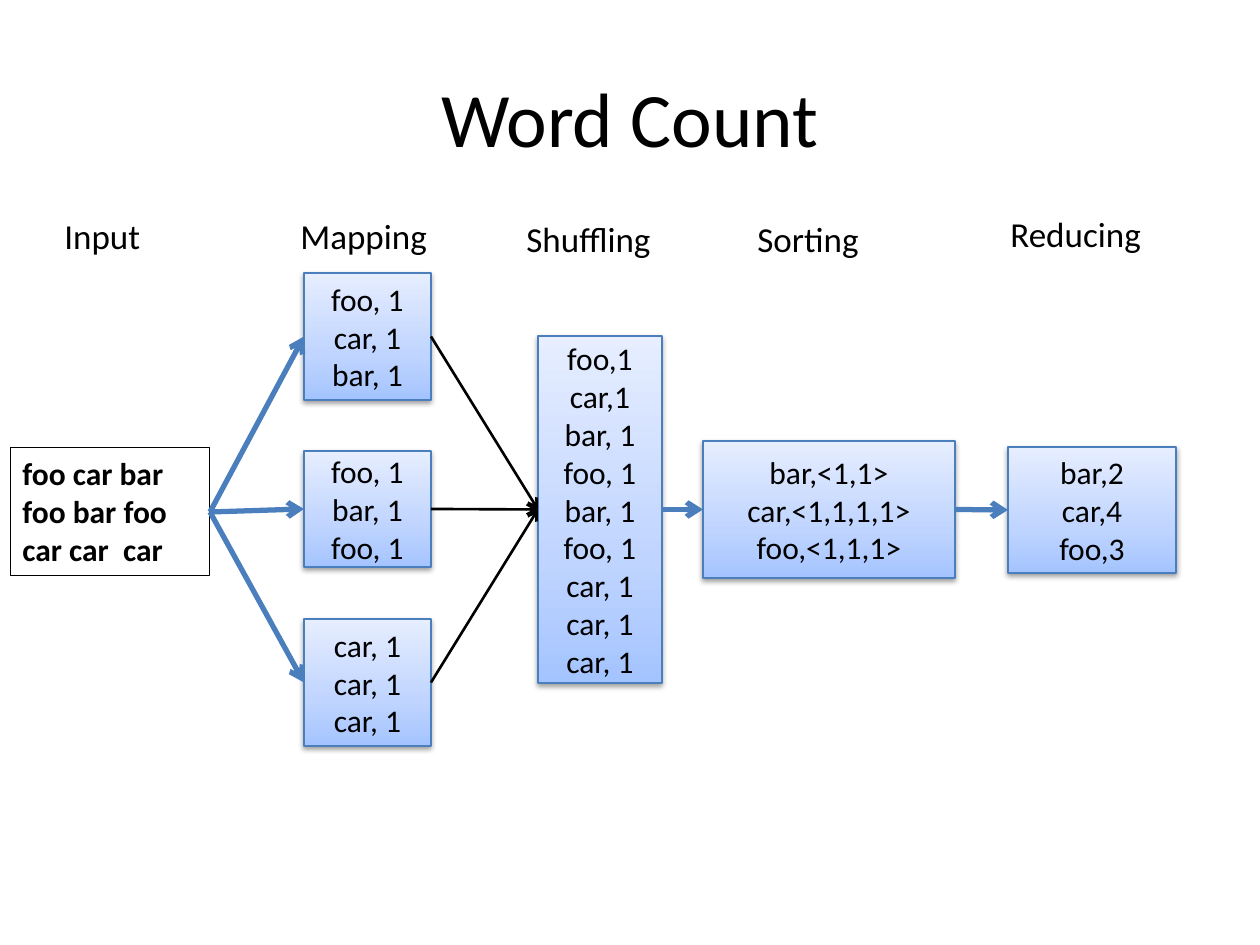
from dataclasses import dataclass
from itertools import pairwise

from lxml.etree import SubElement
from pptx import Presentation
from pptx.dml.color import RGBColor as Rgb
from pptx.enum.shapes import MSO_CONNECTOR as Connector, MSO_SHAPE as Preset
from pptx.enum.text import MSO_ANCHOR as Anchor, PP_ALIGN as Align
from pptx.oxml import parse_xml
from pptx.oxml.ns import nsdecls, qn
from pptx.util import Emu, Pt

SCALE = 914400 / 126
LEFT_SITE, RIGHT_SITE = 1, 3


@dataclass(frozen=True)
class Theme:
    font: str = "Calibri"
    ink: str = "000000"
    accent: str = "4B7EBC"
    gradient: tuple = ((0, "A4C4FF"), (35, "BFD4FF"), (100, "E6EEFF"))
    title_size: int = 44
    heading_size: int = 20
    body_size: int = 18
    frame: float = 0.5
    outline: float = 0.75
    thin: float = 1.5
    thick: float = 3


THEME = Theme()


def px(*lengths):
    return [Emu(round(length * SCALE)) for length in lengths]


def write(frame, text, size=THEME.body_size, bold=False, align=Align.LEFT,
          anchor=Anchor.TOP, wrap=True):
    frame.word_wrap = wrap
    frame.vertical_anchor = anchor
    frame.text = text
    for paragraph in frame.paragraphs:
        paragraph.alignment = align
        font = paragraph.font
        font.name, font.size, font.bold = THEME.font, Pt(size), bold
        font.color.rgb = Rgb.from_string(THEME.ink)


def draw_line(line, color, width):
    line.color.rgb = Rgb.from_string(color)
    line.width = Pt(width)


def add_gradient(card):
    stops = "".join(
        f'<a:gs pos="{position * 1000}"><a:srgbClr val="{color}"/></a:gs>'
        for position, color in THEME.gradient)
    card._element.spPr.find(qn("a:prstGeom")).addnext(parse_xml(
        f'<a:gradFill {nsdecls("a")} rotWithShape="1"><a:gsLst>{stops}</a:gsLst>'
        '<a:lin ang="16200000" scaled="0"/></a:gradFill>'))


def add_shadow(card):
    card.shadow.inherit = False
    card._element.spPr.find(qn("a:effectLst")).append(parse_xml(
        f'<a:outerShdw {nsdecls("a")} blurRad="{Pt(3.1)}" dist="{Pt(1.6)}" '
        'dir="5400000" rotWithShape="0"><a:srgbClr val="000000">'
        '<a:alpha val="38000"/></a:srgbClr></a:outerShdw>'))


def add_title(slide, box, text):
    title = slide.shapes.title
    title.left, title.top, title.width, title.height = px(*box)
    write(title.text_frame, text, size=THEME.title_size, align=Align.CENTER,
          anchor=Anchor.MIDDLE)


def add_heading(slide, box, text):
    heading = slide.shapes.add_textbox(*px(*box))
    write(heading.text_frame, text, size=THEME.heading_size, wrap=False)


def add_input(slide, box, words):
    source = slide.shapes.add_shape(Preset.RECTANGLE, *px(*box))
    source.shadow.inherit = False
    source.fill.background()
    draw_line(source.line, THEME.ink, THEME.frame)
    write(source.text_frame, words, bold=True)
    return source


def add_card(slide, box, pairs):
    card = slide.shapes.add_shape(Preset.RECTANGLE, *px(*box))
    add_gradient(card)
    draw_line(card.line, THEME.accent, THEME.outline)
    add_shadow(card)
    write(card.text_frame, pairs, align=Align.CENTER, anchor=Anchor.MIDDLE)
    return card


def add_mapping(slide, box, splits):
    left, top, width, height = box
    rows = ((0, 127), (178, 116), (height - 127, 127))
    return [add_card(slide, (left, top + offset, width, row_height), pairs)
            for (offset, row_height), pairs in zip(rows, splits)]


def add_arrow(slide, start, end, color=THEME.accent, width=THEME.thick):
    arrow = slide.shapes.add_connector(Connector.STRAIGHT, 0, 0, 0, 0)
    arrow.begin_connect(start, RIGHT_SITE)
    arrow.end_connect(end, LEFT_SITE)
    draw_line(arrow.line, color, width)
    SubElement(arrow.line._get_or_add_ln(), qn("a:tailEnd"), type="arrow")
    SubElement(arrow._element.spPr, qn("a:effectLst"))


def main():
    deck = Presentation()
    deck.slide_width, deck.slide_height = px(1260, 945)
    slide = deck.slides.add_slide(deck.slide_layouts[5])

    add_title(slide, (63, 38, 1134, 157), "Word Count")
    for left, top, width, name in (
            (52, 208, 115, "Input"), (288, 208, 174, "Mapping"),
            (514, 211, 179, "Shuffling"), (745, 211, 147, "Sorting"),
            (998, 206, 184, "Reducing")):
        add_heading(slide, (left, top, width, 55), name)

    source = add_input(slide, (10, 448, 200, 128),
                       "foo car bar\nfoo bar foo\ncar car  car")
    mapped = add_mapping(slide, (304, 273, 127, 473), (
        "foo, 1\ncar, 1\nbar, 1",
        "foo, 1\nbar, 1\nfoo, 1",
        "car, 1\ncar, 1\ncar, 1"))
    shuffled = add_card(
        slide, (538, 336, 124, 347),
        "foo,1\ncar,1\nbar, 1\nfoo, 1\nbar, 1\nfoo, 1\ncar, 1\ncar, 1\ncar, 1")
    ordered = add_card(slide, (703, 441, 252, 137),
                       "bar,<1,1>\ncar,<1,1,1,1>\nfoo,<1,1,1>")
    reduced = add_card(slide, (1008, 447, 168, 126), "bar,2\ncar,4\nfoo,3")

    for split in mapped:
        add_arrow(slide, source, split)
        add_arrow(slide, split, shuffled, color=THEME.ink, width=THEME.thin)
    for start, end in pairwise((shuffled, ordered, reduced)):
        add_arrow(slide, start, end)

    deck.save("out.pptx")


if __name__ == "__main__":
    main()
